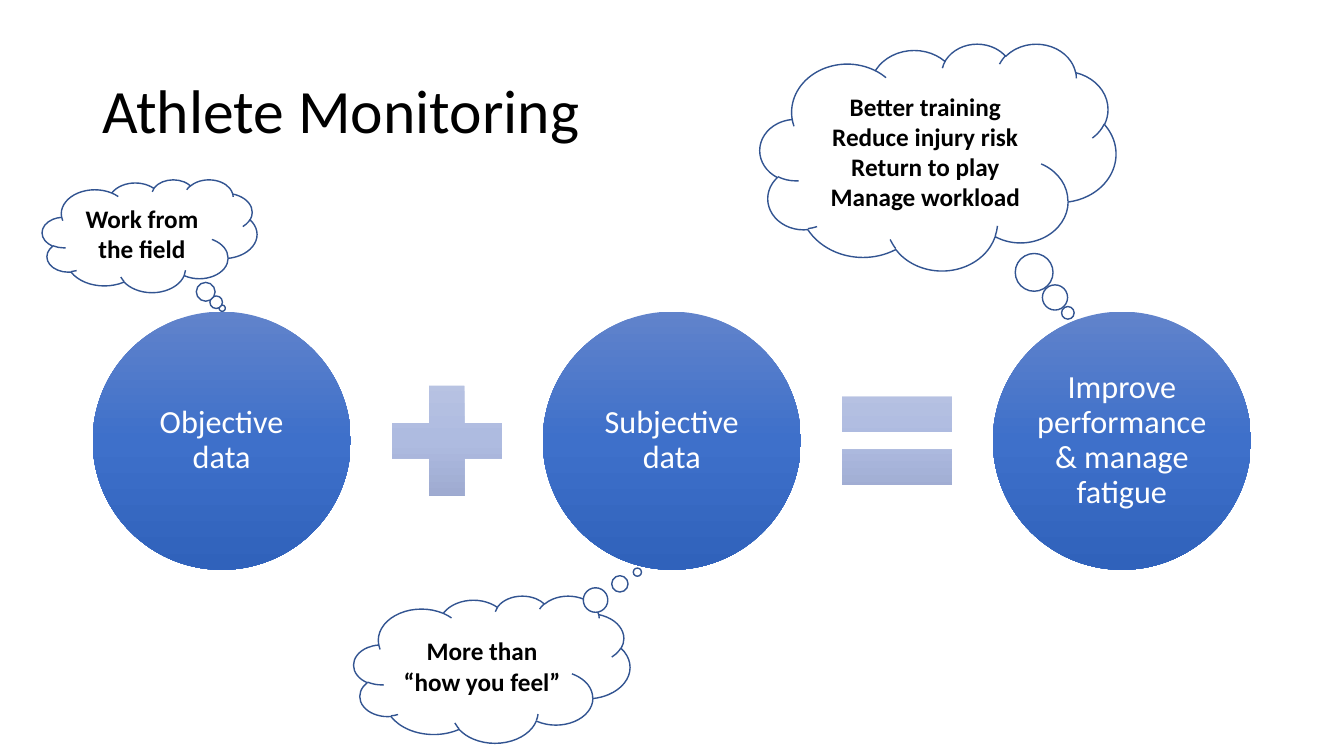
from dataclasses import dataclass

from lxml import etree
from pptx import Presentation
from pptx.dml.color import RGBColor
from pptx.enum.shapes import MSO_SHAPE
from pptx.enum.text import MSO_ANCHOR, PP_ALIGN
from pptx.oxml.ns import qn
from pptx.util import Pt

OVAL, PLUS, EQUAL = MSO_SHAPE.OVAL, MSO_SHAPE.MATH_PLUS, MSO_SHAPE.MATH_EQUAL
CLOUD = MSO_SHAPE.CLOUD_CALLOUT
MIDDLE = MSO_ANCHOR.MIDDLE
LEFT, CENTER = PP_ALIGN.LEFT, PP_ALIGN.CENTER


@dataclass(frozen=True)
class Theme:
    font: str = "Calibri"
    title_size: float = 44
    circle_size: float = 23
    cloud_size: float = 18
    black: str = "000000"
    white: str = "FFFFFF"
    outline: str = "325491"
    circle_gradient: tuple = ("6183CB", "3E70CA", "3062BB")
    operator_gradient: tuple = ("BBC5E3", "AEBBE0", "98A4CB")


THEME = Theme()

# Terms of the equation, and the operator that follows each of the first two
TERMS = ["Objective data", "Subjective data", "Improve performance & manage fatigue"]
OPERATORS = [PLUS, EQUAL]

# Thought clouds: box, tail position, lines
CLOUDS = [
    ((30.2, 128.2, 153.4, 80.6), (0.338, 0.641), ["Work from the field"]),
    ((252.7, 425.5, 197.3, 105.1), (0.527, -0.66), ["More than “how you feel”"]),
    ((542.9, 31, 254.2, 162), (0.365, 0.688),
     ["Better training", "Reduce injury risk", "Return to play", "Manage workload"]),
]


def write_text(shape, lines, size, color, align=CENTER, bold=False, spacing=1.0):
    frame = shape.text_frame
    frame.word_wrap = True
    frame.vertical_anchor = MIDDLE
    frame.text = "\n".join(lines)
    for paragraph in frame.paragraphs:
        paragraph.alignment = align
        paragraph.line_spacing = spacing
        paragraph.font.name = THEME.font
        paragraph.font.size = Pt(size)
        paragraph.font.bold = bold
        paragraph.font.color.rgb = RGBColor.from_string(color)


def add_plain_shape(slide, kind, box):
    shape = slide.shapes.add_shape(kind, *map(Pt, box))
    shape.shadow.inherit = False
    return shape


def add_gradient_shape(slide, kind, box, colors):
    """Add a borderless shape shaded downwards through evenly spaced colours."""
    shape = add_plain_shape(slide, kind, box)
    shape.line.fill.background()
    shape.fill.gradient()
    shape.fill.gradient_angle = 270
    stops = next(shape.element.iter(qn("a:gsLst")))
    for stop in list(stops):
        stops.remove(stop)
    for index, color in enumerate(colors):
        position = index * 100000 // (len(colors) - 1)
        stop = etree.SubElement(stops, qn("a:gs"), pos=str(position))
        etree.SubElement(stop, qn("a:srgbClr"), val=color)
    return shape


def add_title(slide, box, text):
    title = slide.shapes.add_textbox(*map(Pt, box))
    write_text(title, [text], THEME.title_size, THEME.black, align=LEFT, spacing=0.9)


def add_equation(slide, box):
    """Spread the circles over the box, with an operator centred in each gap."""
    left, top, width, diameter = box
    pitch = (width - diameter) / (len(TERMS) - 1)
    operator_size = 107.2
    operator_left = (diameter + pitch - operator_size) / 2
    operator_top = top + (diameter - operator_size) / 2

    for index, term in enumerate(TERMS):
        circle_left = left + index * pitch
        circle = add_gradient_shape(slide, OVAL, (circle_left, top, diameter, diameter),
                                    THEME.circle_gradient)
        frame = circle.text_frame
        frame.margin_left = frame.margin_right = Pt(2.3)
        frame.margin_top = frame.margin_bottom = Pt(2.3)
        write_text(circle, [term], THEME.circle_size, THEME.white, spacing=0.9)
        if index < len(OPERATORS):
            operator_box = (circle_left + operator_left, operator_top,
                            operator_size, operator_size)
            add_gradient_shape(slide, OPERATORS[index], operator_box,
                               THEME.operator_gradient)


def add_cloud(slide, box, tail, lines):
    cloud = add_plain_shape(slide, CLOUD, box)
    for index, offset in enumerate(tail):
        cloud.adjustments[index] = offset
    cloud.fill.solid()
    cloud.fill.fore_color.rgb = RGBColor.from_string(THEME.white)
    cloud.line.color.rgb = RGBColor.from_string(THEME.outline)
    cloud.line.width = Pt(1)
    write_text(cloud, lines, THEME.cloud_size, THEME.black, bold=True)


def main():
    presentation = Presentation()
    presentation.slide_width, presentation.slide_height = Pt(960), Pt(540)
    slide = presentation.slides.add_slide(presentation.slide_layouts[6])

    add_title(slide, (66, 28.8, 828, 104.4), "Athlete Monitoring")
    add_equation(slide, (66.2, 222.6, 827.4, 184.4))
    for box, tail, lines in CLOUDS:
        add_cloud(slide, box, tail, lines)

    presentation.save("out.pptx")


if __name__ == "__main__":
    main()
